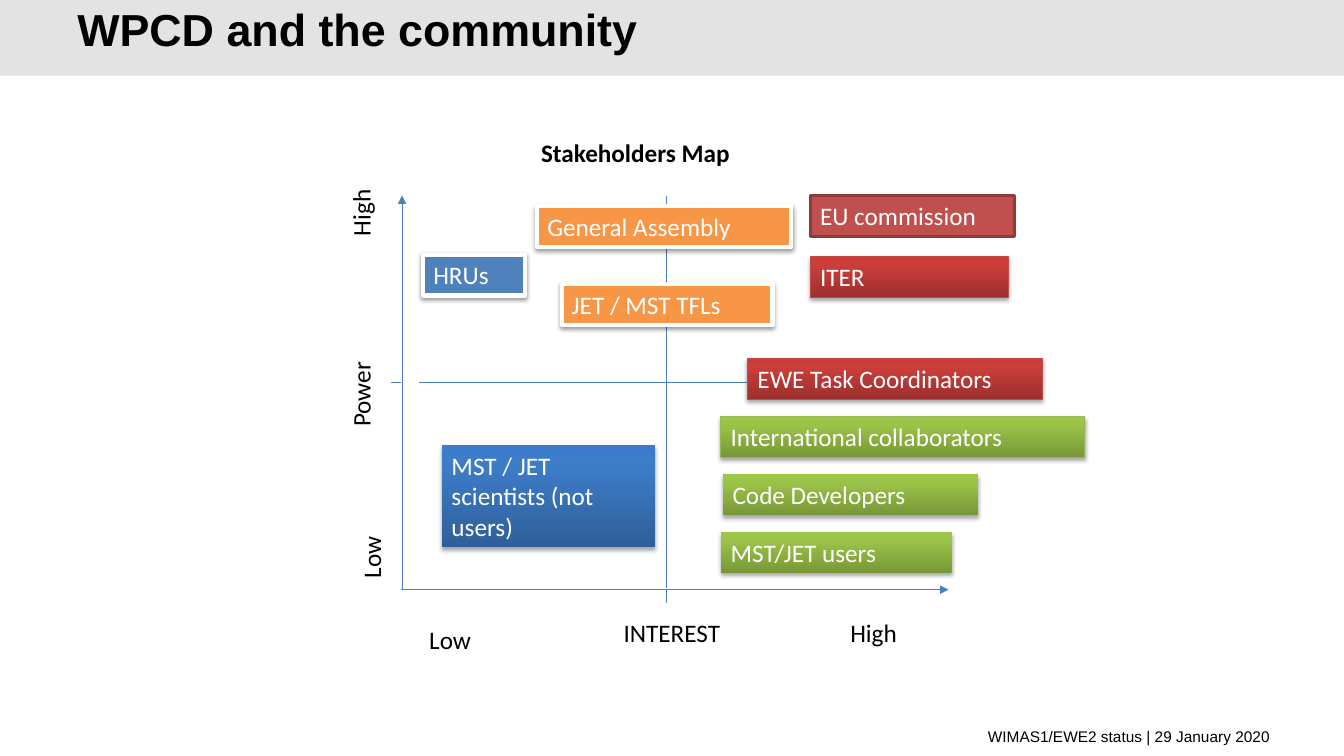
from dataclasses import dataclass
from lxml import etree
from pptx import Presentation
from pptx.dml.color import RGBColor
from pptx.enum.shapes import MSO_CONNECTOR, MSO_SHAPE
from pptx.enum.text import MSO_ANCHOR, MSO_AUTO_SIZE, PP_ALIGN
from pptx.oxml import parse_xml
from pptx.oxml.ns import nsdecls, qn
from pptx.util import Pt

RECTANGLE = MSO_SHAPE.RECTANGLE
STRAIGHT = MSO_CONNECTOR.STRAIGHT
TOP, MIDDLE = MSO_ANCHOR.TOP, MSO_ANCHOR.MIDDLE
LEFT, RIGHT = PP_ALIGN.LEFT, PP_ALIGN.RIGHT
GROW, FIXED = MSO_AUTO_SIZE.SHAPE_TO_FIT_TEXT, MSO_AUTO_SIZE.NONE


@dataclass(frozen=True)
class BoxStyle:
    fill: tuple  # one colour, or three from bottom to top
    line: str = ""
    line_width: float = 0.75
    shadow: tuple = ()  # opacity in percent, blur, distance


SOFT, RAISED = (38, 3.1, 1.6), (35, 3.1, 1.8)
GREEN = ("779737", "9BC348", "9DC746")
RED = ("9C2F2D", "CB3E3A", "CE3B37")


class Theme:
    band, ink, axis = "E3E3E3", "000000", "4B7EBC"
    axis_width = 0.75
    stops = (0, 80, 100)
    title = {"name": "Arial", "size": Pt(32), "bold": True}
    footer = {"name": "Arial", "size": Pt(11), "bold": False}
    label = {"name": "Calibri", "size": Pt(18), "bold": False}
    heading = {**label, "bold": True}
    box_text = "FFFFFF"
    boxes = {
        "flat red": BoxStyle(("C0504D",), "8E3B39", 2),
        "red": BoxStyle(RED, "BF4C48", shadow=RAISED),
        "green": BoxStyle(GREEN, shadow=RAISED),
        "edged green": BoxStyle(GREEN, "98B955", shadow=RAISED),
        "orange": BoxStyle(("F79646",), "FFFFFF", 3, SOFT),
        "flat blue": BoxStyle(("4F81BD",), "FFFFFF", 3, SOFT),
        "blue": BoxStyle(("2F5F99", "3D7CC7", "3A7CCB"), shadow=RAISED),
    }


class SlideBuilder:
    def __init__(self, slide, theme):
        self.slide, self.theme = slide, theme

    def set_text(self, shape, text, font, color, align=LEFT, anchor=TOP, auto_size=GROW):
        frame = shape.text_frame
        settings = {"word_wrap": True, "vertical_anchor": anchor, "auto_size": auto_size}
        for name, value in settings.items():
            setattr(frame, name, value)
        para = frame.paragraphs[0]
        para.alignment = align
        span = para.add_run()
        span.text = text
        for name, value in font.items():
            setattr(span.font, name, value)
        span.font.color.rgb = RGBColor.from_string(color)
        return para

    def rectangle(self, left, top, width, height, style):
        shape = self.slide.shapes.add_shape(RECTANGLE, Pt(left), Pt(top), Pt(width), Pt(height))
        if len(style.fill) == 1:
            shape.fill.solid()
            shape.fill.fore_color.rgb = RGBColor.from_string(style.fill[0])
        else:
            self.gradient(shape, style.fill)
        if style.line:
            shape.line.color.rgb = RGBColor.from_string(style.line)
            shape.line.width = Pt(style.line_width)
        else:
            shape.line.fill.background()
        shape.shadow.inherit = False
        if style.shadow:
            opacity, blur, distance = style.shadow
            effects = shape.element.spPr.find(qn("a:effectLst"))
            effects.append(parse_xml(
                f'<a:outerShdw {nsdecls("a")} blurRad="{Pt(blur)}" dist="{Pt(distance)}" '
                f'dir="5400000" rotWithShape="0"><a:srgbClr val="000000">'
                f'<a:alpha val="{opacity * 1000}"/></a:srgbClr></a:outerShdw>'))
        return shape

    def gradient(self, shape, colors):
        shape.fill.gradient()
        shape.fill.gradient_angle = 90
        stop_list = shape.element.spPr.find(qn("a:gradFill")).find(qn("a:gsLst"))
        for stop in list(stop_list):
            stop_list.remove(stop)
        for position, color in zip(self.theme.stops, colors):
            stop = etree.SubElement(stop_list, qn("a:gs"), pos=str(position * 1000))
            etree.SubElement(stop, qn("a:srgbClr"), val=color)

    def title(self, text, left, top, width, height, band_size):
        title = self.slide.shapes.title
        band = self.rectangle(0, 0, *band_size, BoxStyle((self.theme.band,)))
        title.element.addprevious(band.element)
        place = {"left": left, "top": top, "width": width, "height": height}
        for name, value in place.items():
            setattr(title, name, Pt(value))
        para = self.set_text(title, text, self.theme.title, self.theme.ink,
                             anchor=MIDDLE, auto_size=FIXED)
        para.line_spacing = Pt(32)

    def label(self, text, left, top, width, height=29.1, font=None, rotation=0, **layout):
        box = self.slide.shapes.add_textbox(Pt(left), Pt(top), Pt(width), Pt(height))
        box.rotation = rotation
        self.set_text(box, text, font or self.theme.label, self.theme.ink, **layout)

    def stakeholder(self, text, kind, left, top, width, height=29.1):
        box = self.rectangle(left, top, width, height, self.theme.boxes[kind])
        self.set_text(box, text, self.theme.label, self.theme.box_text)

    def line(self, start, end, arrow=False):
        line = self.slide.shapes.add_connector(STRAIGHT, *map(Pt, start + end))
        line.line.color.rgb = RGBColor.from_string(self.theme.axis)
        line.line.width = Pt(self.theme.axis_width)
        properties = line.element.spPr
        if arrow:
            etree.SubElement(properties.find(qn("a:ln")), qn("a:tailEnd"), type="triangle")
        etree.SubElement(properties, qn("a:effectLst"))


def main():
    deck = Presentation()
    deck.slide_width, deck.slide_height = Pt(960), Pt(540)
    theme = Theme()
    page = SlideBuilder(deck.slides.add_slide(deck.slide_layouts[5]), theme)

    # Title band
    page.title("WPCD and the community", 48, 5.8, 792, 36, band_size=(960, 54))

    # Axes with middle lines and ticks
    axis_x, axis_y, axis_top = 287.2, 421.2, 139.7
    middle_x, middle_y = 476, 273
    page.line((286.6, axis_y), (677.5, axis_y), arrow=True)
    page.line((axis_x, axis_y), (axis_x, axis_top), arrow=True)
    page.line((middle_x, axis_y), (middle_x, 430.6))
    page.line((286.6, middle_y), (279.4, middle_y))
    page.line((299.5, middle_y), (670.3, middle_y))
    page.line((middle_x, 419.8), (middle_x, axis_top))

    # Axis labels
    for text, left, top, width, rotation in (
        ("Low", 299.5, 442.3, 68.4, 0),
        ("INTEREST", 438.3, 437.6, 198, 0),
        ("High", 600.3, 437.6, 69.8, 0),
        ("Low", 231.1, 371.3, 68.4, 270),
        ("Power", 218.9, 258.5, 77.8, 270),
        ("High", 221.8, 125.3, 72, 270),
    ):
        page.label(text, left, top, width, rotation=rotation)

    # Stakeholders
    for text, kind, left, top, width in (
        ("EU commission", "flat red", 578.7, 139.7, 146.2),
        ("ITER", "red", 578.7, 183.4, 141.4),
        ("General Assembly", "orange", 383.8, 147.4, 181.4),
        ("EWE Task Coordinators", "red", 534, 256.3, 210.4),
        ("JET / MST TFLs", "orange", 401.3, 203, 150.5),
        ("HRUs", "flat blue", 302.4, 182, 72.7),
    ):
        page.stakeholder(text, kind, left, top, width)
    page.stakeholder("MST / JET scientists (not users)", "blue", 315.4, 318.2, 152.6, 72.7)

    # Low power, high interest, in equal rows
    for row, (text, kind, left, width) in enumerate((
        ("International collaborators", "edged green", 514.8, 260),
        ("Code Developers", "green", 516.2, 182.4),
        ("MST/JET users", "green", 514.8, 165),
    )):
        page.stakeholder(text, kind, left, 297.5 + 41.4 * row, width)

    # Map heading and footer
    page.label("Stakeholders Map", 379.4, 94.5, 308.9, font=theme.heading)
    page.label("WIMAS1/EWE2 status | 29 January 2020", 49, 515.5, 865.4, 20.9,
               font=theme.footer, align=RIGHT, anchor=MIDDLE, auto_size=FIXED)

    deck.save("out.pptx")


if __name__ == "__main__":
    main()
